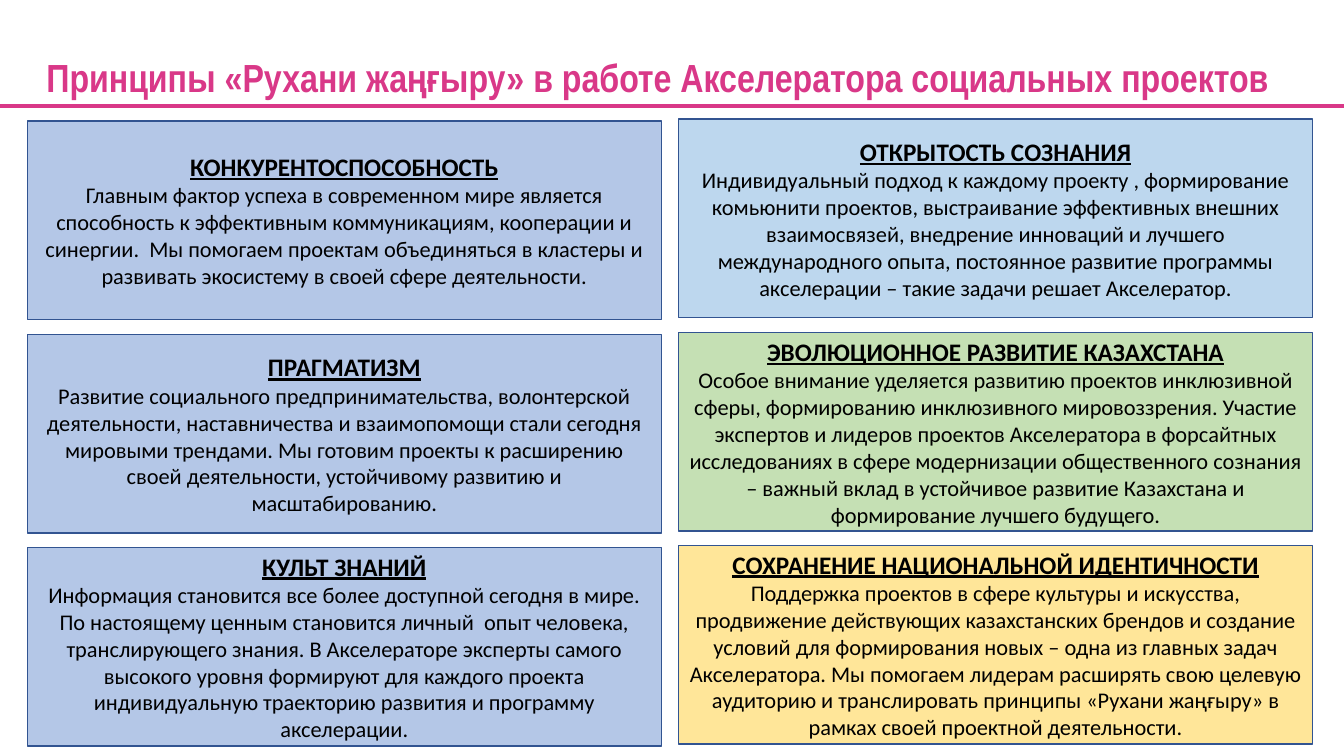
from lxml.etree import SubElement
from pptx import Presentation
from pptx.dml.color import RGBColor
from pptx.enum.shapes import MSO_CONNECTOR as CONN, MSO_SHAPE as SHAPE
from pptx.enum.text import MSO_ANCHOR as ANCHOR, MSO_AUTO_SIZE as FIT, PP_ALIGN as ALIGN
from pptx.oxml.ns import qn
from pptx.util import Inches, Pt

COLORS = {
    "pink": "D93888",
    "blue": "B4C7E7",
    "sky": "BDD7EE",
    "green": "C5E0B4",
    "yellow": "FFE699",
    "border": "325491",
    "text": "000000",
}

LEFT_CARDS = [
    ("blue", "КОНКУРЕНТОСПОСОБНОСТЬ",
     "Главным фактор успеха в современном мире является способность к эффективным "
     "коммуникациям, кооперации и синергии.  Мы помогаем проектам объединяться в "
     "кластеры и развивать экосистему в своей сфере деятельности."),
    ("blue", "ПРАГМАТИЗМ",
     "Развитие социального предпринимательства, волонтерской деятельности, "
     "наставничества и взаимопомощи стали сегодня мировыми трендами. Мы готовим "
     "проекты к расширению своей деятельности, устойчивому развитию и масштабированию."),
    ("blue", "КУЛЬТ ЗНАНИЙ",
     "Информация становится все более доступной сегодня в мире. По настоящему ценным "
     "становится личный  опыт человека, транслирующего знания. В Акселераторе эксперты "
     "самого высокого уровня формируют для каждого проекта индивидуальную траекторию "
     "развития и программу акселерации."),
]
RIGHT_CARDS = [
    ("sky", "ОТКРЫТОСТЬ СОЗНАНИЯ",
     "Индивидуальный подход к каждому проекту , формирование комьюнити проектов, "
     "выстраивание эффективных внешних взаимосвязей, внедрение инноваций и лучшего "
     "международного опыта, постоянное развитие программы акселерации – такие задачи "
     "решает Акселератор."),
    ("green", "ЭВОЛЮЦИОННОЕ РАЗВИТИЕ КАЗАХСТАНА",
     "Особое внимание уделяется развитию проектов инклюзивной сферы, формированию "
     "инклюзивного мировоззрения. Участие экспертов и лидеров проектов Акселератора в "
     "форсайтных исследованиях в сфере модернизации общественного сознания – важный "
     "вклад в устойчивое развитие Казахстана и формирование лучшего будущего."),
    ("yellow", "СОХРАНЕНИЕ НАЦИОНАЛЬНОЙ ИДЕНТИЧНОСТИ",
     "Поддержка проектов в сфере культуры и искусства, продвижение действующих "
     "казахстанских брендов и создание условий для формирования новых – одна из главных "
     "задач Акселератора. Мы помогаем лидерам расширять свою целевую аудиторию и "
     "транслировать принципы «Рухани жаңғыру» в рамках своей проектной деятельности."),
]


class Deck:
    title_font = "Arial Narrow"
    body_font = "Calibri"

    def __init__(self, prs):
        self.s = prs.slides.add_slide(prs.slide_layouts[5])

    def color(self, name):
        return RGBColor.from_string(COLORS[name])

    def format(self, p, font, size, color, bold=False, underline=False):
        p.font.name = font
        p.font.size = Pt(size)
        p.font.bold = bold
        p.font.underline = underline
        p.font.color.rgb = self.color(color)

    def title(self, text, x, y, w, h):
        sp = self.s.shapes.title
        sp.left, sp.top, sp.width, sp.height = map(Inches, (x, y, w, h))
        tf = sp.text_frame
        tf.text = text
        tf.word_wrap = True
        tf.auto_size = FIT.NONE
        tf.vertical_anchor = ANCHOR.MIDDLE
        p = tf.paragraphs[0]
        p.alignment = ALIGN.LEFT
        p.line_spacing = 0.9
        self.format(p, self.title_font, 28, "pink", bold=True)

    def rule(self, x1, x2, y):
        ln = self.s.shapes.add_connector(CONN.STRAIGHT, Inches(x1), Inches(y), Inches(x2), Inches(y))
        ln.line.color.rgb = self.color("pink")
        ln.line.width = Pt(3)
        SubElement(ln._element.spPr, qn("a:effectLst"))

    def card(self, x, y, w, h, fill, heading, body):
        sp = self.s.shapes.add_shape(SHAPE.RECTANGLE, *map(Inches, (x, y, w, h)))
        sp.shadow.inherit = False
        sp.fill.solid()
        sp.fill.fore_color.rgb = self.color(fill)
        sp.line.color.rgb = self.color("border")
        sp.line.width = Pt(1)
        tf = sp.text_frame
        tf.word_wrap = True
        tf.vertical_anchor = ANCHOR.MIDDLE
        tf.text = f"{heading}\n{body}"
        head, text = tf.paragraphs
        head.alignment = text.alignment = ALIGN.CENTER
        self.format(head, self.body_font, 18, "text", bold=True, underline=True)
        self.format(text, self.body_font, 16, "text")


def main():
    prs = Presentation()
    prs.slide_width, prs.slide_height = Inches(13.33), Inches(7.5)
    deck = Deck(prs)
    deck.title("Принципы «Рухани жаңғыру» в работе Акселератора социальных проектов",
               0.36, 0.44, 12.84, 0.71)
    tops = (1.2, 3.32, 5.43)
    for x, rise, cards in ((0.27, 0, LEFT_CARDS), (6.73, 0.02, RIGHT_CARDS)):
        for y, card in zip(tops, cards):
            deck.card(x, y - rise, 6.29, 1.97, *card)
    deck.rule(0, 13.33, 1.05)
    prs.save("out.pptx")


if __name__ == "__main__":
    main()
